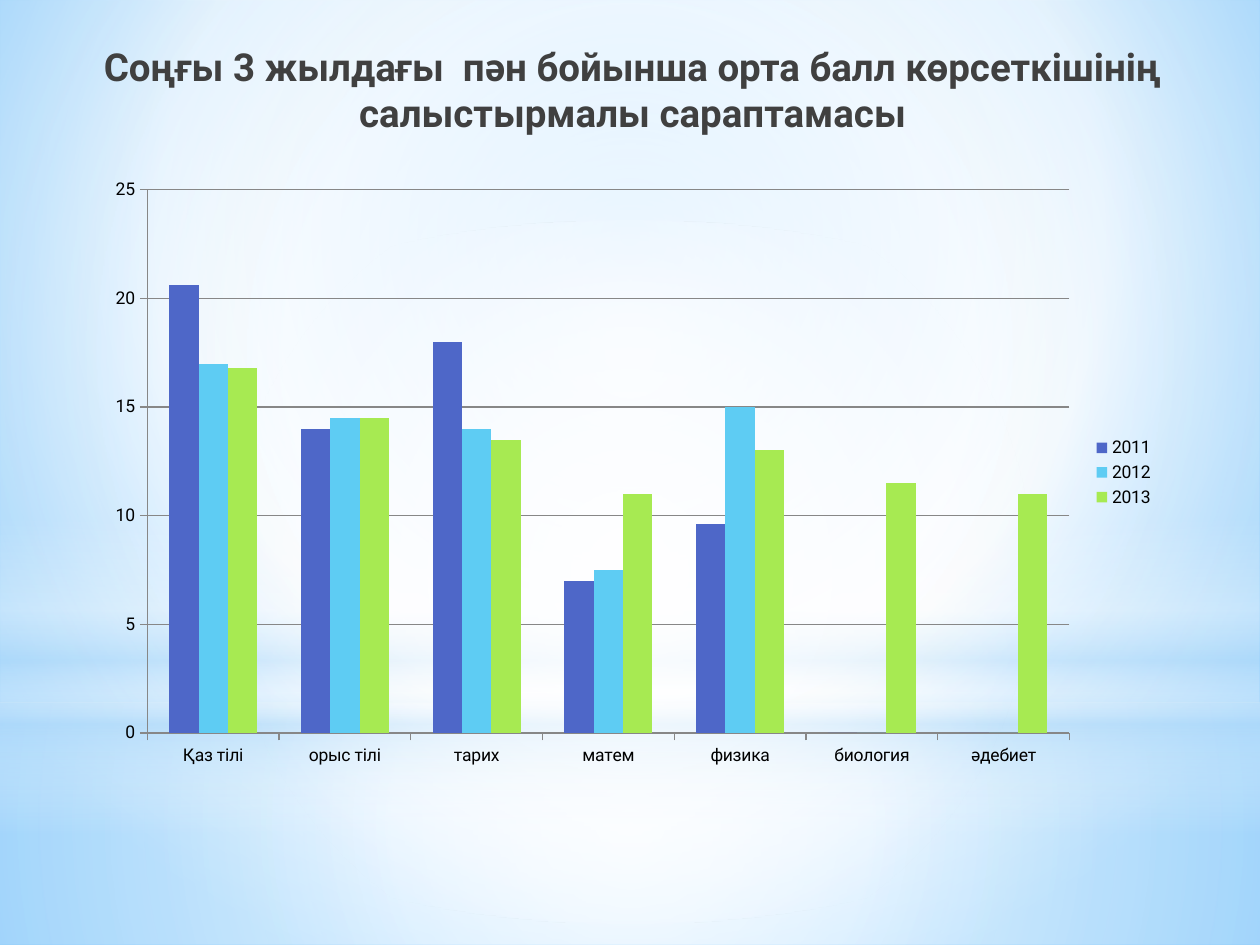
from dataclasses import dataclass
from typing import Optional

from lxml.etree import SubElement
from pptx import Presentation
from pptx.chart.data import CategoryChartData
from pptx.dml.color import RGBColor
from pptx.enum.chart import XL_CHART_TYPE as ChartType
from pptx.enum.chart import XL_LEGEND_POSITION as LegendPosition
from pptx.enum.chart import XL_TICK_MARK as TickMark
from pptx.enum.shapes import MSO_SHAPE as Preset
from pptx.enum.text import MSO_ANCHOR as Anchor
from pptx.enum.text import PP_ALIGN as Align
from pptx.oxml.ns import qn
from pptx.util import Cm, Pt

FONT = "Roboto"
WHITE = RGBColor(0xFF, 0xFF, 0xFF)
BLACK = RGBColor(0x00, 0x00, 0x00)
CHARCOAL = RGBColor(0x40, 0x40, 0x40)
AXIS_GREY = RGBColor(0x87, 0x87, 0x87)
MIST = RGBColor(0xB4, 0xDC, 0xFA)
SKY = RGBColor(0x9E, 0xD5, 0xFF)
AZURE = RGBColor(0x5B, 0xB9, 0xFF)
INDIGO = RGBColor(0x4E, 0x67, 0xC8)
CYAN = RGBColor(0x5E, 0xCC, 0xF3)
LIME = RGBColor(0xA7, 0xEA, 0x52)

WIDTH, HEIGHT, HORIZON = 25.4, 19.05, 14.17
CENTRE = (50, 50, 50, 50)


@dataclass
class Stop:
    position: int
    color: RGBColor
    opacity: int = 100


@dataclass
class Gradient:
    stops: list[Stop]
    focus: Optional[tuple[int, int, int, int]] = CENTRE


@dataclass
class Glow:
    preset: Preset
    top: float
    height: float
    gradient: Gradient


@dataclass
class Year:
    name: str
    scores: list[float]
    color: RGBColor


BACKDROP = Gradient(
    [Stop(0, SKY), Stop(60, WHITE), Stop(100, AZURE)], (20, 10, 20, 60)
)
GLOWS = [
    Glow(Preset.RECTANGLE, HORIZON, HEIGHT - HORIZON, Gradient(
        [Stop(0, WHITE, 91), Stop(37, WHITE, 76), Stop(100, MIST, 79)])),
    Glow(Preset.RECTANGLE, 0, HORIZON, Gradient(
        [Stop(0, WHITE, 89), Stop(48, WHITE, 62), Stop(100, MIST, 79)])),
    Glow(Preset.RECTANGLE, 10.46, 6.35, Gradient(
        [Stop(0, WHITE, 0), Stop(29, WHITE, 30), Stop(45, MIST, 40),
         Stop(55, WHITE, 26), Stop(65, MIST, 60), Stop(100, WHITE, 0)], None)),
    Glow(Preset.OVAL, 4.45, HORIZON, Gradient(
        [Stop(0, WHITE), Stop(56, WHITE, 0)])),
]
TITLE = "Соңғы 3 жылдағы  пән бойынша орта балл көрсеткішінің салыстырмалы сараптамасы"
SUBJECTS = ["Қаз тілі", "орыс тілі", "тарих", "матем", "физика", "биология", "әдебиет"]
YEARS = [
    Year("2011", [20.6, 14, 18, 7, 9.6, 0, 0], INDIGO),
    Year("2012", [17, 14.5, 14, 7.5, 15, 0, 0], CYAN),
    Year("2013", [16.8, 14.5, 13.5, 11, 13, 11.5, 11], LIME),
]


def paint_gradient(fill, owner, gradient: Gradient) -> None:
    fill.solid()
    solid = owner.find(".//" + qn("a:solidFill"))
    blend = solid.makeelement(qn("a:gradFill"), {"rotWithShape": "1"})
    stop_list = SubElement(blend, qn("a:gsLst"))
    for stop in gradient.stops:
        mark = SubElement(stop_list, qn("a:gs"), pos=str(stop.position * 1000))
        color = SubElement(mark, qn("a:srgbClr"), val=str(stop.color))
        if stop.opacity < 100:
            SubElement(color, qn("a:alpha"), val=str(stop.opacity * 1000))
    if gradient.focus is None:
        SubElement(blend, qn("a:lin"), ang="5400000", scaled="0")
    else:
        rings = SubElement(blend, qn("a:path"), {"path": "circle"})
        edges = {side: str(share * 1000) for side, share in zip("ltrb", gradient.focus)}
        SubElement(rings, qn("a:fillToRect"), edges)
    solid.getparent().replace(solid, blend)


def draw_glow(slide, glow: Glow) -> None:
    haze = slide.shapes.add_shape(
        glow.preset, 0, Cm(glow.top), Cm(WIDTH), Cm(glow.height)
    )
    haze.shadow.inherit = False
    haze.line.fill.background()
    paint_gradient(haze.fill, haze.element.spPr, glow.gradient)


def draw_title(slide) -> None:
    frame = slide.shapes.add_textbox(Cm(1.09), Cm(0.74), Cm(23.19), Cm(16.61)).text_frame
    frame.word_wrap = True
    frame.vertical_anchor = Anchor.TOP
    frame.margin_left = Cm(0.38)
    heading = frame.paragraphs[0]
    heading.alignment = Align.CENTER
    heading.space_after = Pt(3)
    run = heading.add_run()
    run.text = TITLE
    run.font.name = FONT
    run.font.size = Pt(22)
    run.font.bold = True
    run.font.color.rgb = CHARCOAL


def style_line(line) -> None:
    line.color.rgb = AXIS_GREY
    line.width = Pt(0.75)


def draw_scores(slide, years: list[Year]) -> None:
    scores = CategoryChartData()
    scores.categories = SUBJECTS
    for year in years:
        scores.add_series(year.name, year.scores)
    chart = slide.shapes.add_chart(
        ChartType.COLUMN_CLUSTERED, Cm(1.9), Cm(3.38), Cm(21.62), Cm(12.29), scores
    ).chart
    chart.has_title = False
    chart.font.name = FONT
    chart.font.size = Pt(10)
    chart.font.color.rgb = BLACK
    chart.has_legend = True
    chart.legend.position = LegendPosition.RIGHT
    chart.legend.include_in_layout = False

    columns = chart.plots[0]
    columns.gap_width = 150
    columns.overlap = 0
    columns.vary_by_categories = False
    for series, year in zip(columns.series, years):
        series.format.fill.solid()
        series.format.fill.fore_color.rgb = year.color
        series.invert_if_negative = False

    for axis in (chart.category_axis, chart.value_axis):
        axis.major_tick_mark = TickMark.OUTSIDE
        axis.minor_tick_mark = TickMark.NONE
        style_line(axis.format.line)
    chart.value_axis.minimum_scale = 0
    chart.value_axis.maximum_scale = 25
    chart.value_axis.major_unit = 5
    chart.value_axis.has_major_gridlines = True
    style_line(chart.value_axis.major_gridlines.format.line)


def main() -> None:
    deck = Presentation()
    deck.slide_width, deck.slide_height = Cm(WIDTH), Cm(HEIGHT)
    slide = deck.slides.add_slide(deck.slide_layouts[6])
    paint_gradient(slide.background.fill, slide.element, BACKDROP)
    for glow in GLOWS:
        draw_glow(slide, glow)
    draw_title(slide)
    draw_scores(slide, YEARS)
    deck.save("out.pptx")


if __name__ == "__main__":
    main()
